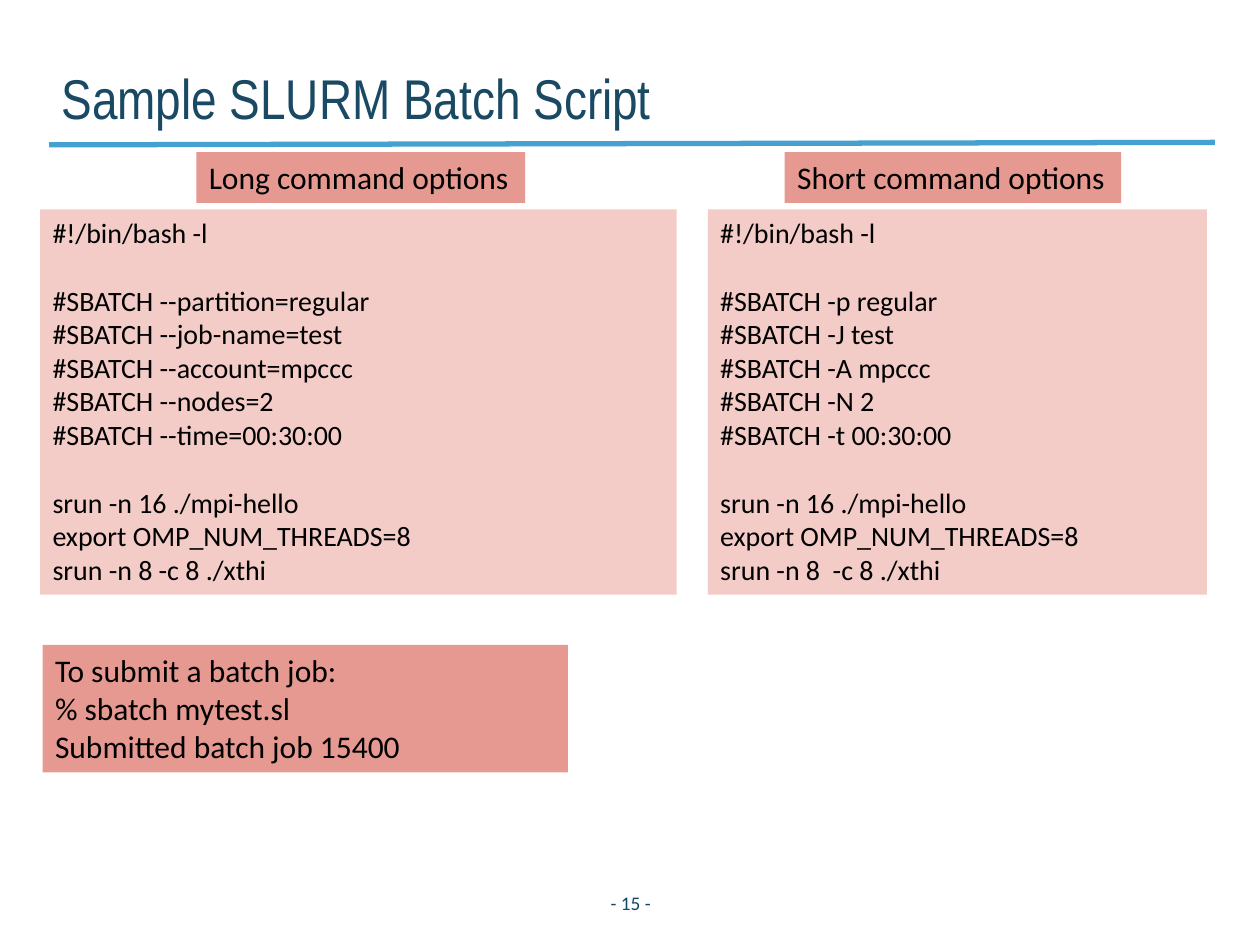
import pptx
import pptx.dml.color
import pptx.enum.shapes
import pptx.enum.text
import pptx.oxml.ns
import pptx.util
from lxml import etree

Cm = pptx.util.Cm
Pt = pptx.util.Pt
ALIGN = pptx.enum.text.PP_ALIGN
ANCHOR = pptx.enum.text.MSO_ANCHOR

COLORS = {
    "rule": "46A0D0",
    "title": "194963",
    "footer": "114766",
    "code": "F3CCC8",
    "label": "E69991",
    "text": "000000",
}
CODE_LINE = 19.5
CODE_TOP = 4.22
LABEL_TOP = 3.07

LONG_OPTIONS = ["--partition=regular", "--job-name=test", "--account=mpccc",
                "--nodes=2", "--time=00:30:00"]
SHORT_OPTIONS = ["-p regular", "-J test", "-A mpccc", "-N 2", "-t 00:30:00"]


def color(name):
    return pptx.dml.color.RGBColor.from_string(COLORS[name])


def add_text(slide, box, lines, size, ink="text", font="Calibri", fill=None,
             anchor=ANCHOR.TOP, align=ALIGN.LEFT, wrap=True):
    panel = slide.shapes.add_textbox(*(Cm(length) for length in box))
    if fill:
        panel.fill.solid()
        panel.fill.fore_color.rgb = color(fill)
    frame = panel.text_frame
    frame.word_wrap = wrap
    frame.vertical_anchor = anchor
    frame.text = "\n".join(lines)
    for paragraph in frame.paragraphs:
        paragraph.alignment = align
        for run in paragraph.runs:
            run.font.size = Pt(size)
            run.font.name = font
            run.font.color.rgb = color(ink)
    return frame


def add_rule(slide):
    rule = slide.shapes.add_connector(
        pptx.enum.shapes.MSO_CONNECTOR.STRAIGHT,
        Cm(0.99), Cm(2.92), Cm(24.49), Cm(2.87))
    rule.line.color.rgb = color("rule")
    rule.line.width = Pt(3)
    properties = rule._element.find(pptx.oxml.ns.qn("p:spPr"))
    etree.SubElement(properties, pptx.oxml.ns.qn("a:effectLst"))


def add_title(slide, title):
    frame = add_text(slide, (0.99, 0.51, 18.95, 2.13), [title], 32, "title",
                     "Arial Narrow", anchor=ANCHOR.BOTTOM)
    frame.margin_top = frame.margin_bottom = 0


def add_label(slide, left, width, label):
    add_text(slide, (left, LABEL_TOP, width, 1.02), [label], 18,
             fill="label", wrap=False)


def add_batch_script(slide, left, width, options, last_command):
    directives = [f"#SBATCH {option}" for option in options]
    commands = ["srun -n 16 ./mpi-hello", "export OMP_NUM_THREADS=8", last_command]
    lines = ["#!/bin/bash -l"] + directives + commands
    frame = add_text(slide, (left, CODE_TOP, width, 7.77), lines, 16, fill="code")
    for block_start in (1, 1 + len(directives)):
        frame.paragraphs[block_start].space_before = Pt(CODE_LINE)


def main():
    deck = pptx.Presentation()
    deck.slide_width = Cm(25.4)
    deck.slide_height = Cm(19.05)
    slide = deck.slides.add_slide(deck.slide_layouts[6])

    add_rule(slide)
    add_title(slide, "Sample SLURM Batch Script")
    add_text(slide, (11.43, 17.7, 2.57, 1.02), ["- 15 -"], 11, "footer",
             anchor=ANCHOR.MIDDLE, align=ALIGN.CENTER)

    add_batch_script(slide, 0.81, 12.83, LONG_OPTIONS, "srun -n 8 -c 8 ./xthi")
    add_batch_script(slide, 14.27, 10.06, SHORT_OPTIONS, "srun -n 8  -c 8 ./xthi")
    add_label(slide, 3.96, 6.63, "Long command options")
    add_label(slide, 15.82, 6.78, "Short command options")

    submission = ["To submit a batch job:", "% sbatch mytest.sl",
                  "Submitted batch job 15400"]
    add_text(slide, (0.86, 13, 10.59, 2.57), submission, 18, fill="label")

    deck.save("out.pptx")


if __name__ == "__main__":
    main()
